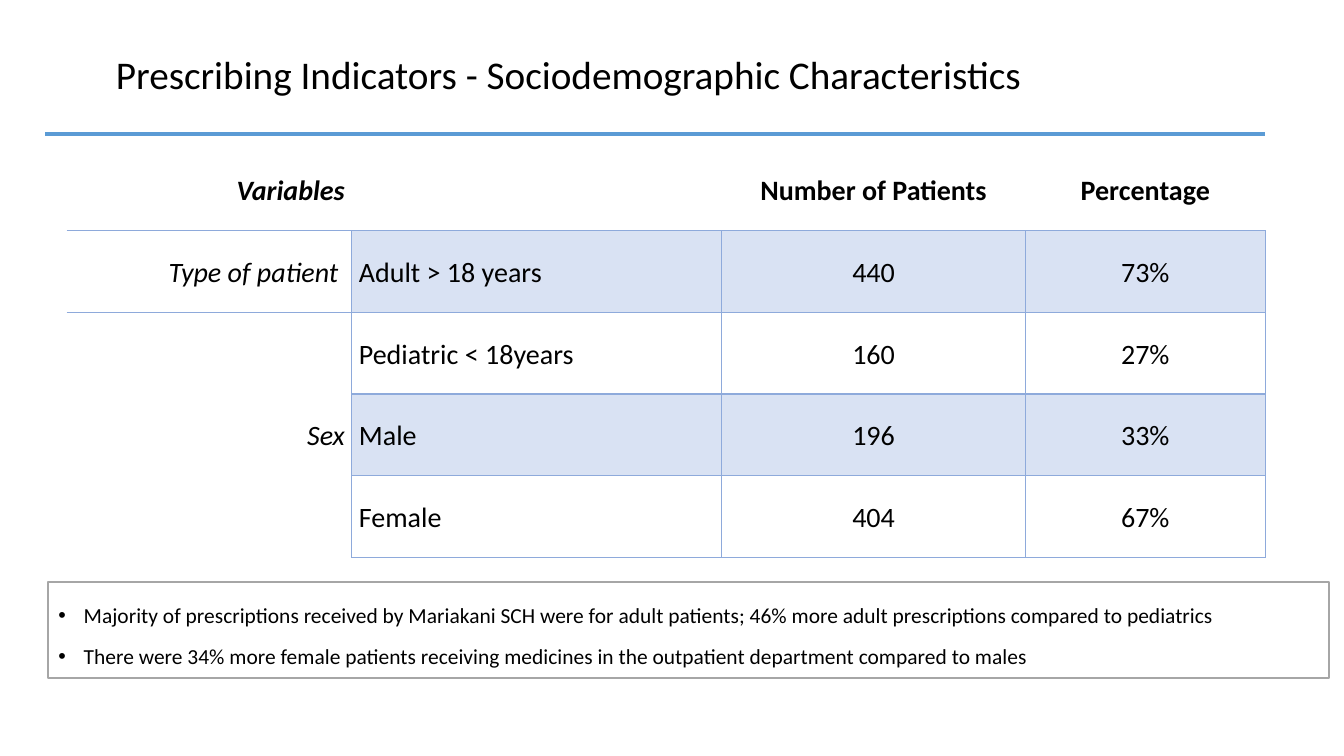
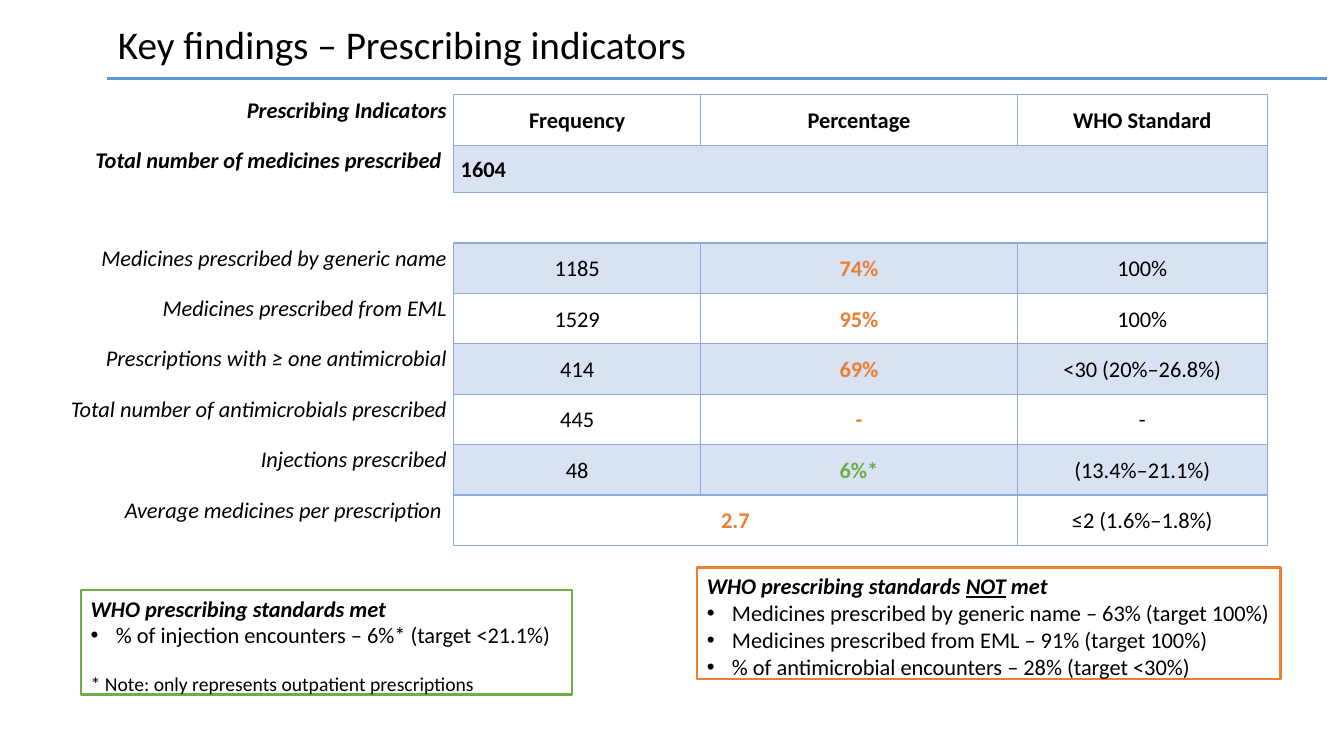
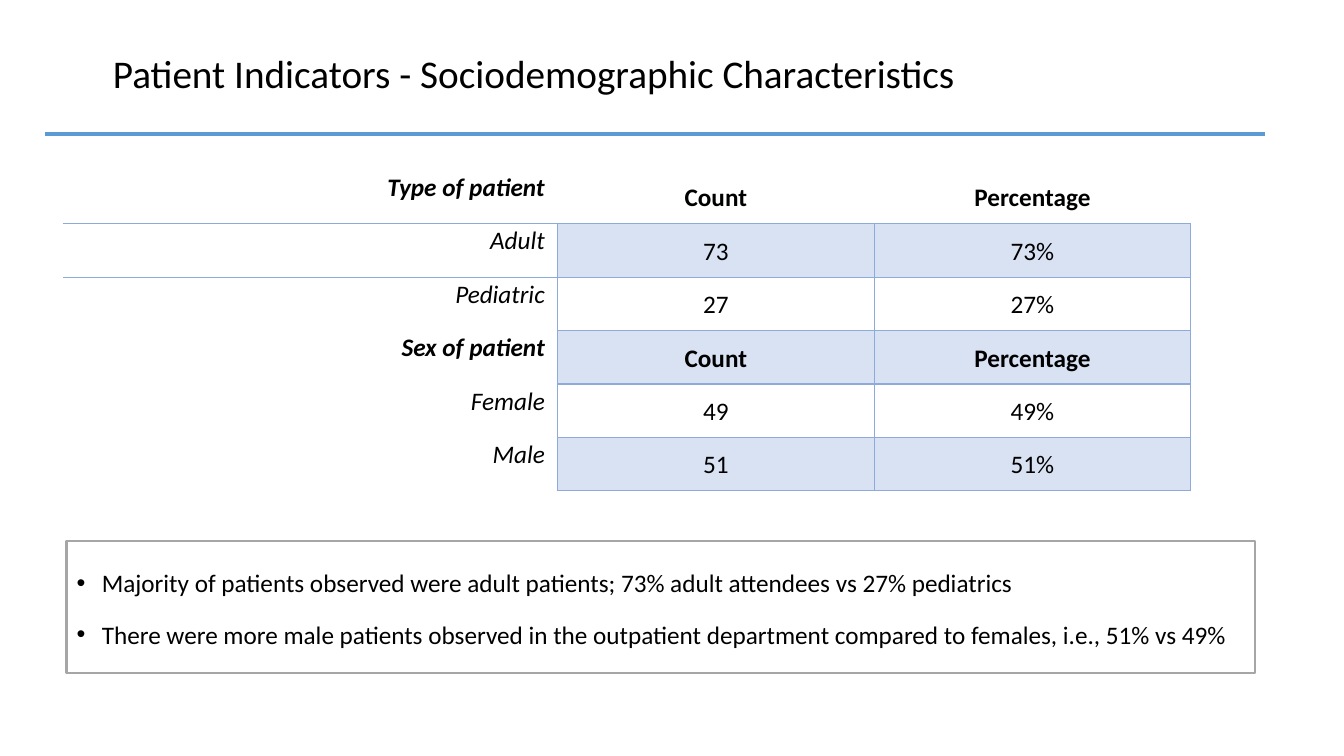
from lxml import etree
from pptx import Presentation
from pptx.dml.color import RGBColor
from pptx.enum.shapes import MSO_CONNECTOR
from pptx.enum.text import MSO_ANCHOR, MSO_AUTO_SIZE, PP_ALIGN
from pptx.oxml.ns import qn
from pptx.util import Pt

LEFT, MID, RIGHT = PP_ALIGN.LEFT, PP_ALIGN.CENTER, PP_ALIGN.RIGHT
TOP, CENTRE = MSO_ANCHOR.TOP, MSO_ANCHOR.MIDDLE
FIXED = MSO_AUTO_SIZE.NONE
STRAIGHT = MSO_CONNECTOR.STRAIGHT

SCALE = 9144  # EMU in one px, 100 px to the inch
FONT = "Calibri"
PLAIN = "{2D5ABB26-0587-4C30-8999-92F81FD0307C}"  # no style, no grid
HUES = {
    "ink": "000000", "paper": "FFFFFF", "band": "D9E2F3", "grid": "8EAADB",
    "rule": "5B9BD5", "frame": "A6A6A6", "good": "70AD47", "bad": "ED7D31",
}
SIDES = {"L": "a:lnL", "R": "a:lnR", "T": "a:lnT", "B": "a:lnB"}
ALL = "LRTB"
TITLE = {"line_spacing": 0.9, "alignment": LEFT}
CELL = {"margin_left": 7 * SCALE, "margin_right": 7 * SCALE,
        "margin_top": 0, "margin_bottom": 0}


# Basics
def px(n):
    return n * SCALE


def hue(name):
    return RGBColor.from_string(HUES[name])


def style(item, values):
    for key, value in values.items():
        setattr(item, key, value)


def place(shape, box):
    style(shape, dict(zip(("left", "top", "width", "height"), map(px, box))))


def write(para, text, size, tone="ink", **looks):
    run = para.add_run()
    run.text = text
    style(run.font, {"name": FONT, "size": Pt(size), **looks})
    run.font.color.rgb = hue(tone)


# Shared slide parts
def start(deck, layout, title, box, rule):
    slide = deck.slides.add_slide(deck.slide_layouts[layout])
    head = slide.shapes.title
    place(head, box)
    style(head.text_frame, {"auto_size": FIXED, "word_wrap": True,
                            "vertical_anchor": CENTRE})
    para = head.text_frame.paragraphs[0]
    style(para, TITLE)
    write(para, title, 28)
    x, y = rule
    line = slide.shapes.add_connector(STRAIGHT, px(x), px(y), px(x + 1210), px(y))
    line.line.color.rgb = hue("rule")
    line.line.width = Pt(2.25)
    etree.SubElement(line.element.spPr, qn("a:effectLst"))
    return slide


def frame(slide, idx, box, tone):
    body = slide.placeholders[idx]
    place(body, box)
    body.line.color.rgb = hue(tone)
    body.line.width = Pt(1.5)
    style(body.text_frame, {"auto_size": FIXED, "word_wrap": True,
                            "vertical_anchor": TOP})
    return body.text_frame


def add_para(text, bullet=True, gap=0, space=1.0):
    para = text.paragraphs[0]
    if para.runs:
        para = text.add_paragraph()
    props = para._p.get_or_add_pPr()
    props.set("marL", str(px(25) if bullet else 0))
    props.set("indent", str(px(-25) if bullet else 0))
    if not bullet:
        etree.SubElement(props, qn("a:buNone"))
    style(para, {"line_spacing": space, "space_before": Pt(gap)})
    return para


def add_list(text, items, size, space=1.0):
    for item in items:
        write(add_para(text, space=space), item, size)


# Tables
def edge(cell, sides):
    props = cell._tc.get_or_add_tcPr()
    spot = 0
    for side, tag in SIDES.items():
        if side in sides:
            line = etree.Element(qn(tag), w=str(Pt(1)))
            fill = etree.SubElement(line, qn("a:solidFill"))
            etree.SubElement(fill, qn("a:srgbClr"), val=HUES["grid"])
            props.insert(spot, line)
            spot += 1


def add_grid(slide, spot, cols, highs, rows, size, bold=(0,), left=(),
             anchor=TOP, tones=None, merges=(), edges=None):
    """Labels are in the first column; odd rows are banded."""
    tones, edges = tones or {}, edges or {}
    box = map(px, (*spot, sum(cols), sum(highs)))
    table = slide.shapes.add_table(len(rows), len(cols), *box).table
    table._tbl.tblPr.find(qn("a:tableStyleId")).text = PLAIN
    style(table, {"first_row": False, "horz_banding": False})
    for col, width in zip(table.columns, cols):
        col.width = px(width)
    for row, high in zip(table.rows, highs):
        row.height = px(high)
    for r, row in enumerate(rows):
        for c, text in enumerate(row):
            cell, label = table.cell(r, c), c == 0
            style(cell, {**CELL, "vertical_anchor": anchor if label else CENTRE})
            cell.fill.solid()
            cell.fill.fore_color.rgb = hue("band" if r % 2 and not label else "paper")
            edge(cell, edges.get((r, c), "R" if label else ALL))
            para = cell.text_frame.paragraphs[0]
            side = RIGHT if label else LEFT if (r, c) in left else MID
            style(para, {"alignment": side, "line_spacing": 1.07})
            if text:
                write(para, text, size, tones.get((r, c), "ink"),
                      bold=r in bold or (r, c) in tones, italic=label)
    for r, first, last in merges:
        table.cell(r, first).merge(table.cell(r, last))


def open_head(count):
    """Header row with only a line below it."""
    return {**{(0, c): "B" for c in range(count)}, (1, 0): "RT"}


# Slides
def prescribing(deck):
    slide = start(deck, 1, "Prescribing Indicators - Sociodemographic Characteristics",
                  (105, 30, 1150, 92), (45, 133))
    rows = [
        ("Variables", "", "Number of Patients", "Percentage"),
        ("Type of patient ", "Adult > 18 years", "440", "73%"),
        ("", "Pediatric < 18years", "160", "27%"),
        ("Sex", "Male", "196", "33%"),
        ("", "Female", "404", "67%"),
    ]
    add_grid(slide, (66, 148), (283, 367, 301, 238), [81] * 5, rows, 20,
             left={(r, 1) for r in range(5)}, anchor=CENTRE, edges=open_head(4))
    add_list(frame(slide, 1, (48, 577, 1270, 96), "frame"), [
        "Majority of prescriptions received by Mariakani SCH were for adult patients; "
        "46% more adult prescriptions compared to pediatrics",
        "There were 34% more female patients receiving medicines in the outpatient "
        "department compared to males",
    ], 15.3, 1.6)


def findings(deck):
    slide = start(deck, 3, "Key findings – Prescribing indicators",
                  (107, 17, 1150, 59), (106, 78))
    rows = [
        ("Prescribing Indicators", "Frequency", "Percentage", "WHO Standard"),
        ("Total number of medicines prescribed ", "1604", "", ""),
        ("", "", "", ""),
        ("Medicines prescribed by generic name", "1185", "74%", "100%"),
        ("Medicines prescribed from EML", "1529", "95%", "100%"),
        ("Prescriptions with ≥ one antimicrobial", "414", "69%", "<30 (20%–26.8%)"),
        ("Total number of antimicrobials prescribed", "445", "-", "-"),
        ("Injections prescribed", "48", "6%*", "(13.4%–21.1%)"),
        ("Average medicines per prescription ", "2.7", "", "≤2 (1.6%–1.8%)"),
    ]
    tones = {(r, 2): "bad" for r in range(3, 7)}
    tones.update({(7, 2): "good", (8, 1): "bad"})
    edges = {(1, c): "LRT" for c in range(1, 4)}
    edges.update({(2, 0): "R", (2, 1): "", (2, 2): "", (2, 3): "R"})
    add_grid(slide, (16, 94), (434, 245, 314, 248), [50, 47] + [50] * 7, rows, 16,
             bold=(0, 1), left={(1, 1)}, tones=tones, edges=edges,
             merges=((1, 1, 3), (2, 0, 3), (8, 1, 2)))

    # Standards met
    met = frame(slide, 1, (80, 585, 487, 104), "good")
    strong = {"bold": True, "italic": True}
    write(add_para(met, False), "WHO prescribing standards met", 16, **strong)
    add_list(met, ["% of injection encounters – 6%* (target <21.1%)"], 16)
    write(add_para(met, False, 17),
          "* Note: only represents outpatient prescriptions", 14)

    # Standards not met
    unmet = frame(slide, 2, (691, 563, 579, 111), "bad")
    head = add_para(unmet, False)
    for text, under in (("WHO prescribing standards ", False), ("NOT", True),
                        (" met", False)):
        write(head, text, 16, underline=under, **strong)
    add_list(unmet, [
        "Medicines prescribed by generic name – 63% (target 100%)",
        "Medicines prescribed from EML – 91% (target 100%)",
        "% of antimicrobial encounters – 28% (target <30%)",
    ], 16)


def patients(deck):
    slide = start(deck, 1, "Patient Indicators - Sociodemographic Characteristics",
                  (102, 29, 1150, 92), (45, 133))
    rows = [
        ("Type of patient ", "Count", "Percentage"),
        ("Adult ", "73", "73%"),
        ("Pediatric ", "27", "27%"),
        ("Sex of patient ", "Count", "Percentage"),
        ("Female ", "49", "49%"),
        ("Male ", "51", "51%"),
    ]
    add_grid(slide, (62, 169), (491, 314, 314), [53] * 6, rows, 18,
             bold=(0, 3), edges=open_head(3))
    add_list(frame(slide, 1, (66, 537, 1179, 131), "frame"), [
        "Majority of patients observed were adult patients; "
        "73% adult attendees vs 27% pediatrics",
        "There were more male patients observed in the outpatient department "
        "compared to females, i.e., 51% vs 49%",
    ], 18, 1.7)


def main():
    deck = Presentation()
    style(deck, {"slide_width": px(1333), "slide_height": px(750)})
    for build in (prescribing, findings, patients):
        build(deck)
    deck.save("out.pptx")


if __name__ == "__main__":
    main()
